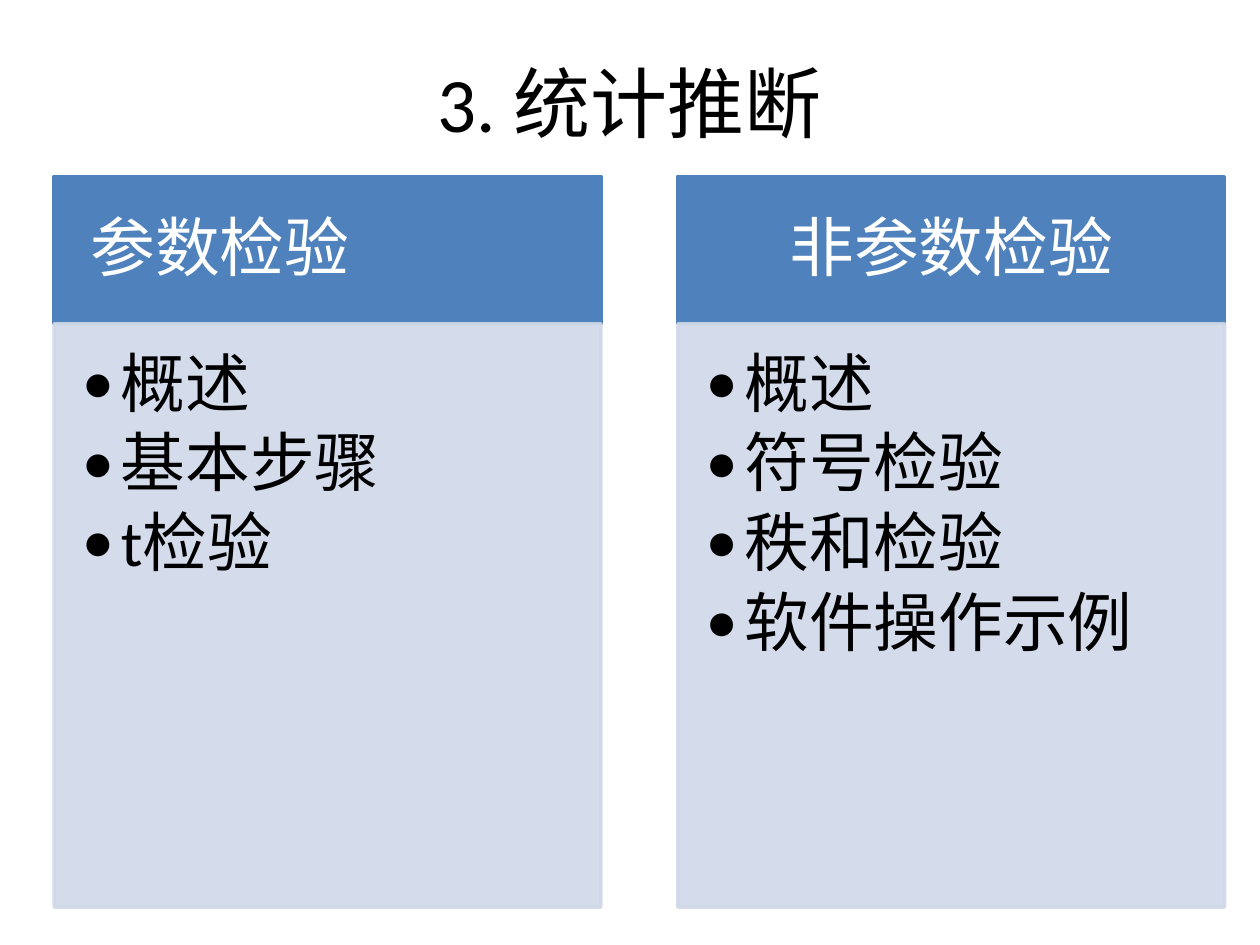
from dataclasses import dataclass

from lxml import etree
from pptx import Presentation
from pptx.dml.color import RGBColor
from pptx.enum.shapes import MSO_SHAPE
from pptx.enum.text import MSO_ANCHOR, PP_ALIGN
from pptx.oxml.ns import qn
from pptx.util import Inches, Pt

RECT = MSO_SHAPE.RECTANGLE
TOP, MIDDLE = MSO_ANCHOR.TOP, MSO_ANCHOR.MIDDLE
LEFT, CENTER = PP_ALIGN.LEFT, PP_ALIGN.CENTER

FONT = "Calibri"
BLUE, PALE, WHITE, BLACK = "4F81BD", "D0D8E8", "FFFFFF", "000000"
WIDTH, HEIGHT = 10, 7.5
GRID_LEFT, GRID_TOP = 0.43, 1.4
COL_WIDTH, COL_PITCH = 4.34, 4.95
HEAD_HEIGHT, BODY_HEIGHT = 1.17, 4.63
TEXT_SIZE, INDENT = 37, 0.31


@dataclass(frozen=True)
class Column:
    """A heading with its list of topics."""

    heading: str
    align: PP_ALIGN
    topics: tuple[str, ...]


@dataclass(frozen=True)
class Style:
    """The look of one kind of box."""

    fill: str
    text: str
    anchor: MSO_ANCHOR
    insets: tuple[float, float, float, float]
    space_after: float
    opacity: int = 100
    bullet: bool = False


HEAD = Style(BLUE, WHITE, MIDDLE, (0.29, 0.16, 0.29, 0.16), 0)
BODY = Style(PALE, BLACK, TOP, (0.22, 0.22, 0.29, 0.32), 5.5, 90, True)

COLUMNS = (
    Column("参数检验", LEFT, ("概述", "基本步骤", "t检验")),
    Column("非参数检验", CENTER, ("概述", "符号检验", "秩和检验", "软件操作示例")),
)


def rgb(value: str) -> RGBColor:
    """Turn a hex string into a colour."""
    return RGBColor.from_string(value)


def add_run(p, text: str, size: float, color: str) -> None:
    """Add one formatted run to a paragraph."""
    r = p.add_run()
    r.text = text
    r.font.name = FONT
    r.font.size = Pt(size)
    r.font.color.rgb = rgb(color)


def add_bullet(p) -> None:
    """Give a paragraph a hanging round bullet."""
    props = p._p.get_or_add_pPr()
    props.set("marL", str(Inches(INDENT)))
    props.set("indent", str(-Inches(INDENT)))
    etree.SubElement(props, qn("a:buFont")).set("typeface", FONT)
    etree.SubElement(props, qn("a:buChar")).set("char", "•")


def add_box(s, x: float, y: float, height: float, lines: tuple[str, ...],
            align: PP_ALIGN, style: Style) -> None:
    """Draw a box of column width with one paragraph per line."""
    sp = s.shapes.add_shape(RECT, Inches(x), Inches(y), Inches(COL_WIDTH), Inches(height))
    sp.shadow.inherit = False
    sp.fill.solid()
    sp.fill.fore_color.rgb = rgb(style.fill)
    sp.line.color.rgb = rgb(style.fill)
    sp.line.width = Pt(2)
    if style.opacity < 100:
        for color in sp._element.spPr.iter(qn("a:srgbClr")):
            etree.SubElement(color, qn("a:alpha")).set("val", str(style.opacity * 1000))
    tf = sp.text_frame
    tf.word_wrap = True
    tf.vertical_anchor = style.anchor
    tf.margin_left, tf.margin_top, tf.margin_right, tf.margin_bottom = map(Inches, style.insets)
    for i, line in enumerate(lines):
        p = tf.add_paragraph() if i else tf.paragraphs[0]
        p.alignment = align
        p.line_spacing = 0.9
        p.space_after = Pt(style.space_after)
        if style.bullet:
            add_bullet(p)
        add_run(p, line, TEXT_SIZE, style.text)


def add_title(s, text: str) -> None:
    """Place and fill the title placeholder."""
    sp = s.shapes.title
    sp.left, sp.top = Inches(0.05 * WIDTH), Inches(0.04 * HEIGHT)
    sp.width, sp.height = Inches(0.9 * WIDTH), Inches(1.01)
    sp.text_frame.vertical_anchor = MIDDLE
    p = sp.text_frame.paragraphs[0]
    p.alignment = CENTER
    add_run(p, text, 44, BLACK)


def main() -> None:
    """Build the slide and save it."""
    prs = Presentation()
    prs.slide_width, prs.slide_height = Inches(WIDTH), Inches(HEIGHT)
    s = prs.slides.add_slide(prs.slide_layouts[5])
    add_title(s, "3. 统计推断")
    for i, column in enumerate(COLUMNS):
        x = GRID_LEFT + i * COL_PITCH
        add_box(s, x, GRID_TOP, HEAD_HEIGHT, (column.heading,), column.align, HEAD)
        add_box(s, x, GRID_TOP + HEAD_HEIGHT, BODY_HEIGHT, column.topics, LEFT, BODY)
    prs.save("out.pptx")


if __name__ == "__main__":
    main()
